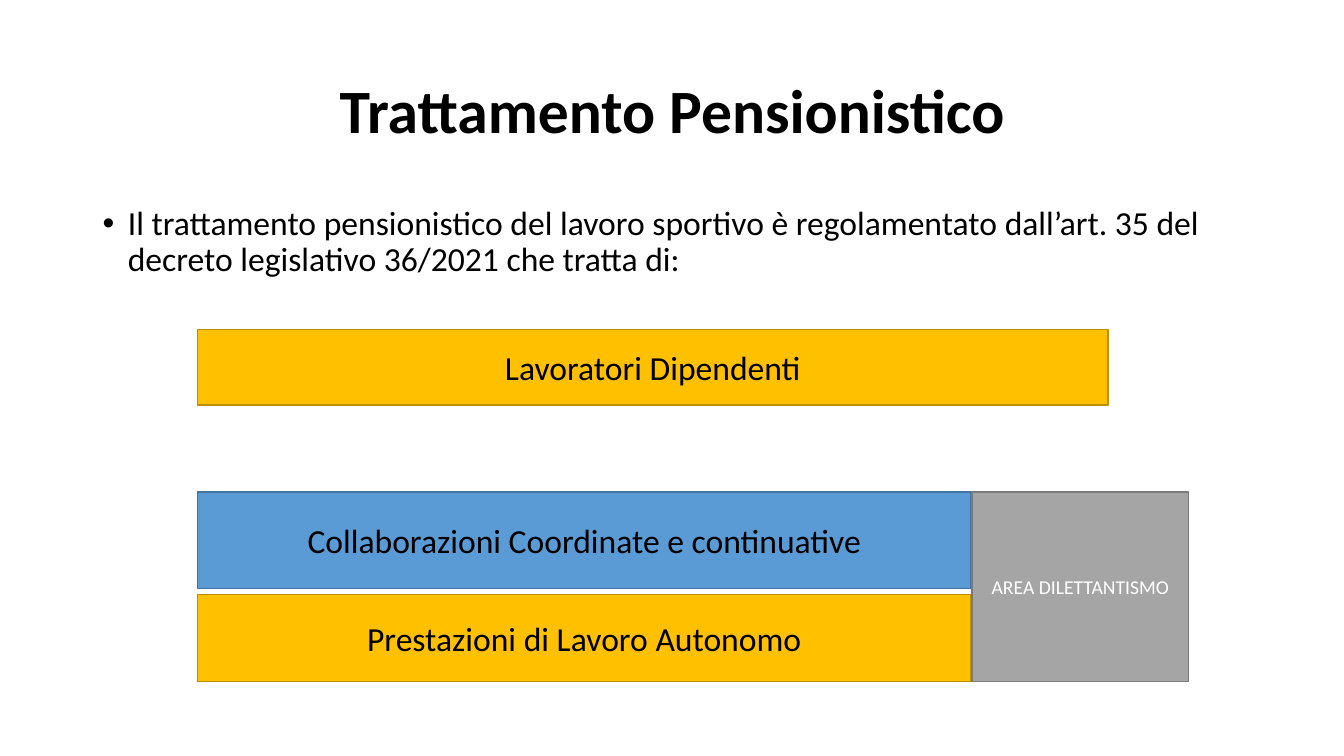
from lxml import etree
from pptx import Presentation
from pptx.dml.color import RGBColor
from pptx.enum.shapes import MSO_SHAPE as Shape
from pptx.enum.text import MSO_ANCHOR as Anchor, PP_ALIGN as Align
from pptx.oxml.ns import qn
from pptx.util import Inches, Pt

BLACK = RGBColor(0x00, 0x00, 0x00)
WHITE = RGBColor(0xFF, 0xFF, 0xFF)
AMBER = RGBColor(0xFF, 0xC0, 0x00)
AMBER_EDGE = RGBColor(0xBD, 0x8E, 0x00)
BLUE = RGBColor(0x5B, 0x9B, 0xD5)
BLUE_EDGE = RGBColor(0x43, 0x73, 0x9E)
GREY = RGBColor(0xA5, 0xA5, 0xA5)
GREY_EDGE = RGBColor(0x7A, 0x7A, 0x7A)


class SlideBuilder:
    font = "Calibri"

    def __init__(self, slide):
        self.s = slide

    def add_text(self, tf, text, size, color=BLACK, bold=False, align=Align.CENTER):
        tf.word_wrap = True
        p = tf.paragraphs[0]
        p.alignment = align
        r = p.add_run()
        r.text = text
        r.font.name = self.font
        r.font.size = Pt(size)
        r.font.bold = bold
        r.font.color.rgb = color
        return p

    def text_box(self, x, y, w, h, anchor):
        sp = self.s.shapes.add_textbox(Inches(x), Inches(y), Inches(w), Inches(h))
        sp.text_frame.vertical_anchor = anchor
        return sp.text_frame

    def title(self, text, x, y, w, h):
        tf = self.text_box(x, y, w, h, Anchor.MIDDLE)
        self.add_text(tf, text, 44, bold=True).line_spacing = 0.9

    def bullet(self, text, x, y, w, h):
        tf = self.text_box(x, y, w, h, Anchor.TOP)
        p = self.add_text(tf, text, 24, align=Align.LEFT)
        p.line_spacing = 0.9
        p.space_before = Pt(10)
        # Hanging bullet
        pPr = p._p.get_or_add_pPr()
        pPr.set("marL", str(Inches(0.25)))
        pPr.set("indent", str(Inches(-0.25)))
        etree.SubElement(pPr, qn("a:buFont")).set("typeface", "Arial")
        etree.SubElement(pPr, qn("a:buChar")).set("char", "•")

    def box(self, text, x, y, w, h, fill, edge, size=24, color=BLACK):
        sp = self.s.shapes.add_shape(
            Shape.RECTANGLE, Inches(x), Inches(y), Inches(w), Inches(h))
        sp.shadow.inherit = False
        sp.fill.solid()
        sp.fill.fore_color.rgb = fill
        sp.line.color.rgb = edge
        sp.line.width = Pt(1)
        sp.text_frame.vertical_anchor = Anchor.MIDDLE
        self.add_text(sp.text_frame, text, size, color)


def main():
    prs = Presentation()
    prs.slide_width, prs.slide_height = Inches(13.33), Inches(7.5)
    b = SlideBuilder(prs.slides.add_slide(prs.slide_layouts[6]))

    # Heading and introduction
    b.title("Trattamento Pensionistico", 0.92, 0.4, 11.5, 1.45)
    b.bullet("Il trattamento pensionistico del lavoro sportivo è regolamentato "
             "dall’art. 35 del decreto legislativo 36/2021 che tratta di:",
             0.92, 2, 11.5, 4.76)

    # Categories of workers
    left = 1.96
    for text, y, w, h, fill, edge in (
        ("Lavoratori Dipendenti", 3.27, 9.03, 0.75, AMBER, AMBER_EDGE),
        ("Collaborazioni Coordinate e continuative", 4.88, 7.67, 0.96, BLUE, BLUE_EDGE),
        ("Prestazioni di Lavoro Autonomo", 5.9, 7.67, 0.86, AMBER, AMBER_EDGE),
    ):
        b.box(text, left, y, w, h, fill, edge)

    # Amateur area beside the last two categories
    b.box("AREA DILETTANTISMO", 9.64, 4.88, 2.15, 1.88, GREY, GREY_EDGE, 14, WHITE)

    prs.save("out.pptx")


if __name__ == "__main__":
    main()
